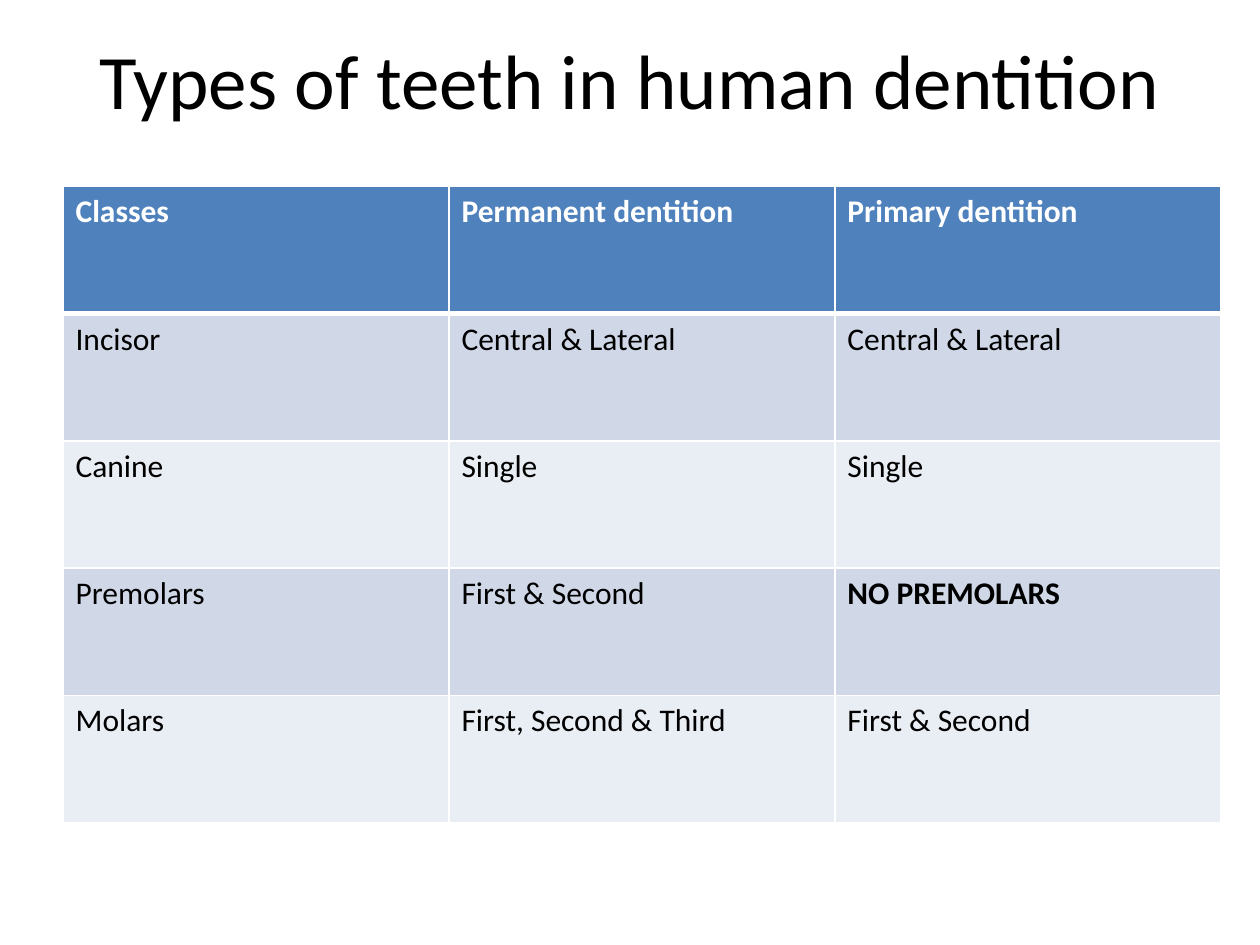
"""Build a slide with a table of tooth classes in human dentition."""
from dataclasses import dataclass

from lxml.etree import SubElement
from pptx import Presentation
from pptx.dml.color import RGBColor
from pptx.enum.text import MSO_ANCHOR as Anchor, PP_ALIGN as Align
from pptx.oxml.ns import qn
from pptx.util import Inches, Pt

FONT = "Calibri"
BLACK, WHITE, BLUE = "000000", "FFFFFF", "4F81BD"
BANDS = ("D0D8E8", "E9EDF4")
THIN, THICK = 1, 3


@dataclass
class Row:
    cells: tuple[str, str, str]
    fill: str
    ink: str = BLACK
    bold: tuple[int, ...] = ()
    top: int = THIN
    base: int = THIN


TEETH = [
    ("Incisor", "Central & Lateral", "Central & Lateral"),
    ("Canine", "Single", "Single"),
    ("Premolars", "First & Second", "NO PREMOLARS"),
    ("Molars", "First, Second & Third", "First & Second"),
]
HEAD = Row(("Classes", "Permanent dentition", "Primary dentition"),
           BLUE, WHITE, bold=(0, 1, 2), base=THICK)
BODY = [
    Row(cells, BANDS[i % 2],
        bold=tuple(c for c, text in enumerate(cells) if text.isupper()),
        top=THIN if i else THICK)
    for i, cells in enumerate(TEETH)
]


def tint(code: str) -> RGBColor:
    """Turn a hex string into a colour."""
    return RGBColor.from_string(code)


def write(para, text: str, size: int, ink: str, bold: bool = False) -> None:
    """Add one styled run to a paragraph."""
    run = para.add_run()
    run.text = text
    font = run.font
    font.name, font.size, font.bold = FONT, Pt(size), bold
    font.color.rgb = tint(ink)


def edge(cell, side: str, width: int) -> None:
    """Draw a white border on one side of a cell."""
    line = SubElement(cell._tc.get_or_add_tcPr(), qn(f"a:ln{side}"), w=str(Pt(width)))
    fill = SubElement(line, qn("a:solidFill"))
    SubElement(fill, qn("a:srgbClr"), val=WHITE)


def add_title(slide, text: str) -> None:
    """Add the centred slide title."""
    box = slide.shapes.add_textbox(Inches(0.5), Inches(0), Inches(9), Inches(1.25))
    frame = box.text_frame
    frame.word_wrap = True
    frame.vertical_anchor = Anchor.MIDDLE
    para = frame.paragraphs[0]
    para.alignment = Align.CENTER
    write(para, text, 44, BLACK)


def add_grid(slide, rows: list[Row]) -> None:
    """Add the table and style each of its cells."""
    table = slide.shapes.add_table(
        len(rows), len(rows[0].cells),
        Inches(0.5), Inches(1.48), Inches(9.19), Inches(5.05)).table
    for r, row in enumerate(rows):
        for c, text in enumerate(row.cells):
            cell = table.cell(r, c)
            for side, width in zip("LRTB", (THIN, THIN, row.top, row.base)):
                edge(cell, side, width)
            cell.fill.solid()
            cell.fill.fore_color.rgb = tint(row.fill)
            write(cell.text_frame.paragraphs[0], text, 18, row.ink, c in row.bold)


def main() -> None:
    """Build and save the slide."""
    deck = Presentation()
    deck.slide_width, deck.slide_height = Inches(10), Inches(7.5)
    slide = deck.slides.add_slide(deck.slide_layouts[6])
    add_title(slide, "Types of teeth in human dentition")
    add_grid(slide, [HEAD, *BODY])
    deck.save("out.pptx")


if __name__ == "__main__":
    main()
